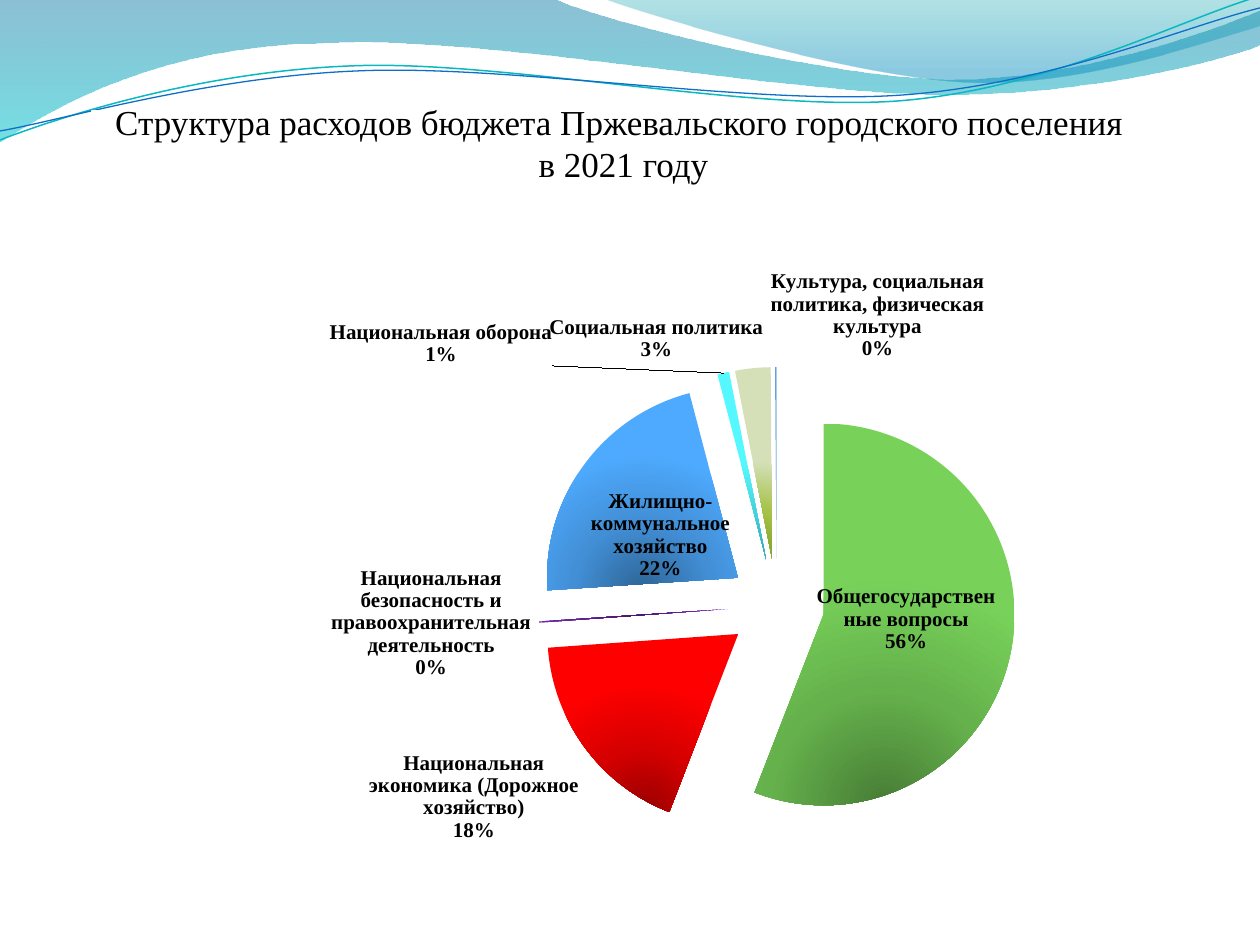
import copy
import math
import pptx
import pptx.chart.data
import pptx.dml.color
import pptx.enum.chart
import pptx.enum.text
import pptx.oxml
import pptx.oxml.ns
import pptx.util

PX = 914400 // 126
THEME = {
    "ink": "000000", "paper": "FFFFFF", "teal": "0AB8BF", "blue": "0F6FC6",
    "serif": "Times New Roman", "sans": "Karla", "title": 20, "label": 12,
}

TITLE = "Структура расходов бюджета Пржевальского городского поселения \vв 2021 году"

# Box, then a route: a start, then lines (one point) or curves (three points).
BANDS = [
    ((-1, -1, 1262, 143),
     [[(0, 0)],
      [(554, -1)],
      [(600, 21), (837, 79), (955, 79)],
      [(1075, 79), (1207, 33), (1260, 11)],
      [(1261, 45)],
      [(1239, 55), (1096, 96), (940, 94)],
      [(784, 94), (481, 35), (324, 43)],
      [(163, 45), (58, 105), (-1, 142)]],
     [(0, "0074A1", 45), (100, "00C6CF", 55)]),
    ((604, -1, 656, 88),
     [[(604, -1)],
      [(641, 14), (859, 78), (969, 82)],
      [(1079, 87), (1211, 40), (1260, 26)],
      [(1260, 0)]],
     [(0, "00A1A9", 30), (80, "008BBF", 45)]),
]
LINES = [
    ((-2, 28, 1262, 89),
     [[(0, 140)],
      [(60, 117), (199, 72), (349, 66)],
      [(498, 59), (747, 112), (898, 101)],
      [(1050, 89), (1182, 19), (1257, -3)]],
     "teal", 0.85),
    ((-3, 38, 1264, 73),
     [[(0, 131)],
      [(59, 121), (207, 77), (357, 71)],
      [(508, 64), (752, 106), (903, 95)],
      [(1053, 84), (1186, 26), (1260, 8)]],
     "blue", 0.75),
]
TILT = 2.7

# Name, share, shades from dark to light, label place, label shift, label width.
# A share that rounds to 0 % is a sliver, so that its slice and label show.
SLIVER = 0.1
SLICES = [
    ("Общегосударственные вопросы", 56, ("477C35", "65B14C", "78D25A"),
     "ctr", (-0.01, -0.02), 0.18),
    ("Национальная экономика (Дорожное хозяйство)", 18,
     ("970000", "D70000", "FF0000"), "outEnd", (0, 0), 0),
    ("Национальная безопасность и правоохранительная деятельность", SLIVER,
     ("431764", "5F218E", "7128A8"), "outEnd", (0, 0), 0.18),
    ("Жилищно-коммунальное хозяйство", 22, ("2E6596", "428FD6", "4EAAFE"),
     "ctr", (0, 0.02), 0),
    ("Национальная оборона", 1, ("319499", "46D3DA", "56F8FF"),
     "outEnd", (-0.15, 0), 0.13),
    ("Социальная политика", 3, ("7A9A20", "A5C249", "D5E0B9"),
     "outEnd", (0.01, 0), 0),
    ("Культура, социальная политика, физическая культура", SLIVER,
     ("0F6FC6",), "outEnd", (0.09, 0), 0.2),
]
CHART = (105, 251, 1129, 645)
PIE = (533, 366, 480, 480)
SIZED = ('<c:ext uri="{{CE6537A1-D6FC-4f65-9D91-7224C49458BB}}" '
         'xmlns:c15="http://schemas.microsoft.com/office/drawing/2012/chart">'
         '<c15:layout><c:manualLayout><c:w val="{}"/><c:h val="0.14"/>'
         '</c:manualLayout></c15:layout></c:ext>')

qn = pptx.oxml.ns.qn


def rgb(code):
    return pptx.dml.color.RGBColor.from_string(code)


def node(tag, inner="", attrs=""):
    spaces = pptx.oxml.ns.nsdecls("a", "c")
    return pptx.oxml.parse_xml(f"<{tag} {spaces} {attrs}>{inner}</{tag}>")


def shade(props, stops, course):
    """Swap the solid fill of a shape or slice for a gradient."""
    marks = "".join(
        f'<a:gs pos="{pos * 1000}"><a:srgbClr val="{code}">'
        f'<a:alpha val="{alpha * 1000}"/></a:srgbClr></a:gs>'
        for pos, code, alpha in stops)
    fill = node("a:gradFill", f"<a:gsLst>{marks}</a:gsLst>{course}", 'rotWithShape="1"')
    props.replace(props.find(qn("a:solidFill")), fill)


def turn(dot, box, angle):
    """Turn a point about the middle of a box."""
    cos, sin = math.cos(math.radians(angle)), math.sin(math.radians(angle))
    midx, midy = box[0] + box[2] / 2, box[1] + box[3] / 2
    x, y = dot[0] - midx, dot[1] - midy
    return midx + x * cos - y * sin, midy + x * sin + y * cos


def draw(slide, box, route, close, angle=0):
    """Draw a freeform of cubic curves that fills the box."""
    left, top, wide, high = (v * PX for v in box)
    pen = slide.shapes.build_freeform(left, top, scale=1.0)
    pen.add_line_segments([(left + wide, top), (left + wide, top + high),
                           (left, top + high)], close=close)
    shape = pen.convert_to_shape()
    shape.shadow.inherit = False
    track = shape._element.spPr.find(".//" + qn("a:path"))
    for step in list(track):
        track.remove(step)
    for n, part in enumerate(route):
        tag = "a:moveTo" if n == 0 else "a:lnTo" if len(part) == 1 else "a:cubicBezTo"
        dots = [turn(dot, box, angle) for dot in part]
        track.append(node(tag, "".join(
            f'<a:pt x="{round(x * PX) - left}" y="{round(y * PX) - top}"/>'
            for x, y in dots)))
    if close:
        track.append(node("a:close"))
    shape.rotation = -angle % 360
    return shape


def write(slide, text, box, *, font, size, color, fill):
    shape = slide.shapes.add_textbox(*(v * PX for v in box))
    shape.fill.solid()
    shape.fill.fore_color.rgb = rgb(fill)
    shape.line.color.rgb = rgb(fill)
    shape.line.width = pptx.util.Pt(0.75)
    frame = shape.text_frame
    frame.word_wrap = True
    frame.vertical_anchor = pptx.enum.text.MSO_ANCHOR.BOTTOM
    frame.margin_left = frame.margin_right = frame.margin_bottom = 0
    frame.margin_top = 6 * PX
    para = frame.paragraphs[0]
    para.text = text
    para.alignment = pptx.enum.text.PP_ALIGN.CENTER
    for run in para.runs:
        style(run.font, font, size, color)


def style(font, name, size, color):
    font.name, font.size = name, pptx.util.Pt(size)
    font.color.rgb = rgb(color)


def spot(x, y, modes="", size=""):
    return node("c:layout", f'<c:manualLayout>{modes}<c:x val="{x:.2f}"/>'
                            f'<c:y val="{y:.2f}"/>{size}</c:manualLayout>')


def label(series):
    tags = series.data_labels
    tags.show_value = False
    tags.show_percentage = tags.show_category_name = True
    tags.number_format, tags.number_format_is_linked = "0%", False
    tags.position = pptx.enum.chart.XL_LABEL_POSITION.OUTSIDE_END
    style(tags.font, THEME["serif"], THEME["label"], THEME["ink"])
    tags.font.bold = True
    root = tags._element
    root.find(qn("c:showBubbleSize")).addnext(node("c:separator", "\n"))
    base = [kid for kid in root if kid.tag != qn("c:showLeaderLines")]
    for i, (*_, place, shift, width) in enumerate(SLICES):
        tag = node("c:dLbl", f'<c:idx val="{i}"/>')
        if any(shift):
            tag.append(spot(*shift))
        tag.extend(copy.deepcopy(base))
        tag.find(qn("c:dLblPos")).set("val", place)
        if width:
            tag.append(node("c:extLst", SIZED.format(width)))
        root.insert(i, tag)


def add_pie(slide):
    data = pptx.chart.data.CategoryChartData()
    data.categories = [row[0] for row in SLICES]
    data.add_series("Series 1", [row[1] for row in SLICES])
    chart = slide.shapes.add_chart(
        pptx.enum.chart.XL_CHART_TYPE.PIE, *(v * PX for v in CHART), data).chart
    chart.has_title = chart.has_legend = False
    style(chart.font, THEME["sans"], THEME["label"], THEME["ink"])
    plot = chart.plots[0]
    plot.vary_by_categories = True
    series = plot.series[0]
    glow = ('<a:path path="circle"><a:fillToRect l="50000" t="100000" '
            'r="50000" b="0"/></a:path>')
    for i, (_, _, tones, *_) in enumerate(SLICES):
        fill = series.points[i].format.fill
        fill.solid()
        fill.fore_color.rgb = rgb(tones[0])
        if len(tones) > 1:
            props = series._element.findall(qn("c:dPt"))[i].find(qn("c:spPr"))
            shade(props, [(50 * n, tone, 100) for n, tone in enumerate(tones)], glow)
    series._element.find(qn("c:dPt")).addprevious(node("c:explosion", attrs='val="25"'))
    label(series)
    area = plot._element.getparent()
    for old in area.findall(qn("c:layout")):
        area.remove(old)
    left, top, wide, high = CHART
    modes = '<c:layoutTarget val="inner"/><c:xMode val="edge"/><c:yMode val="edge"/>'
    size = f'<c:w val="{PIE[2] / wide:.2f}"/><c:h val="{PIE[3] / high:.2f}"/>'
    area.insert(0, spot((PIE[0] - left) / wide, (PIE[1] - top) / high, modes, size))


def main():
    deck = pptx.Presentation()
    deck.slide_width, deck.slide_height = pptx.util.Inches(10), pptx.util.Inches(7.5)
    slide = deck.slides.add_slide(deck.slide_layouts[6])
    for box, route, stops in BANDS:
        band = draw(slide, box, route, True)
        band.fill.solid()
        band.line.fill.background()
        shade(band._element.spPr, stops, '<a:lin ang="5400000" scaled="0"/>')
    for box, route, color, width in LINES:
        wave = draw(slide, box, route, False, TILT)
        wave.fill.background()
        wave.line.color.rgb = rgb(THEME[color])
        wave.line.width = pptx.util.Pt(width)
    write(slide, TITLE, (92, 111, 1063, 74), font=THEME["serif"],
          size=THEME["title"], color=THEME["ink"], fill=THEME["paper"])
    add_pie(slide)
    deck.save("out.pptx")


if __name__ == "__main__":
    main()
